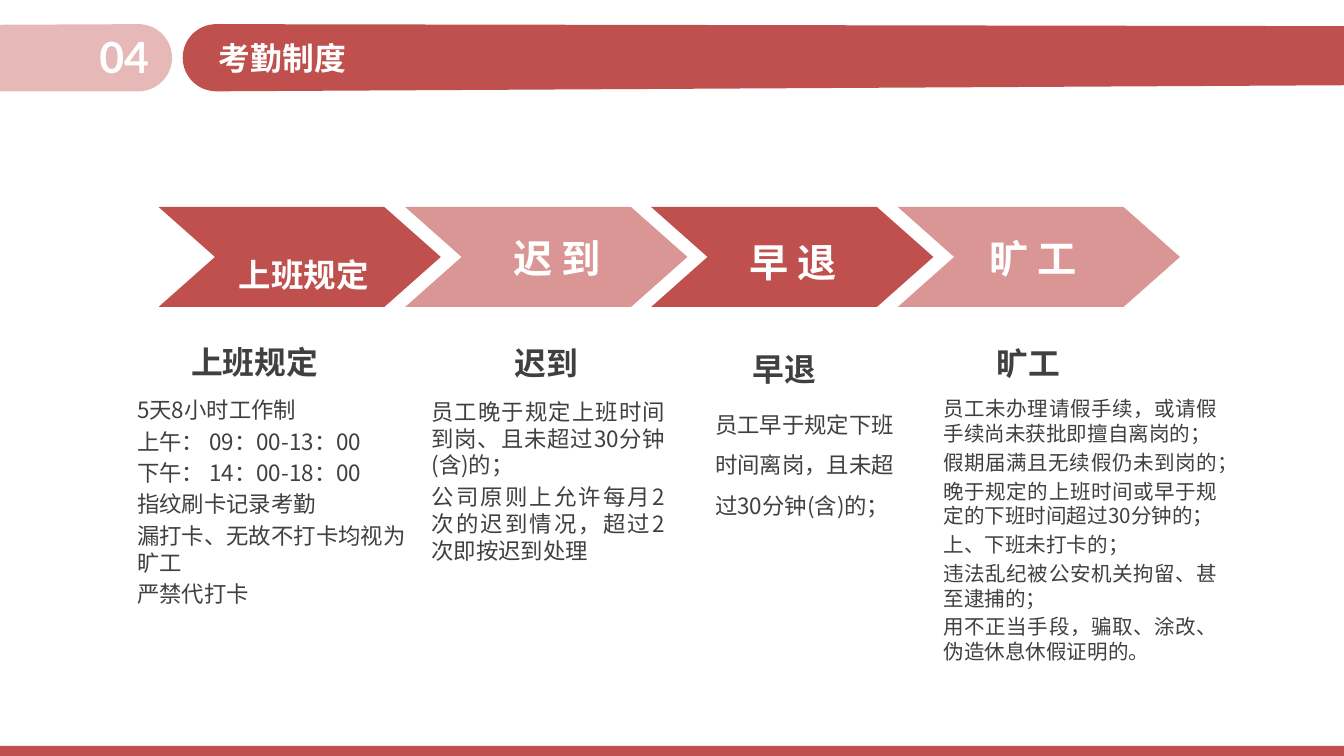
from dataclasses import dataclass
from math import cos, pi, sin

from lxml.etree import SubElement
from pptx import Presentation
from pptx.dml.color import RGBColor as RGB
from pptx.enum.shapes import MSO_SHAPE as SHAPE
from pptx.enum.text import MSO_ANCHOR as ANCHOR, MSO_AUTO_SIZE as AUTO, PP_ALIGN as ALIGN
from pptx.oxml.ns import qn
from pptx.util import Emu, Pt

PX = 4572


@dataclass(frozen=True)
class Theme:
    """Colours, fonts and type sizes of the deck."""
    red: RGB = RGB(0xC0, 0x50, 0x4D)
    rose: RGB = RGB(0xD9, 0x96, 0x94)
    blush: RGB = RGB(0xE6, 0xB9, 0xB8)
    white: RGB = RGB(0xFF, 0xFF, 0xFF)
    ink: RGB = RGB(0x40, 0x40, 0x40)
    latin: str = "Lato"
    cjk: str = "Noto Sans CJK SC"
    number: int = 23
    title: int = 17
    label: int = 21
    lowered: int = 30
    body: int = 12
    small: int = 11


T = Theme()
INSET = dict(margin_left=Emu(14 * PX), margin_right=Emu(14 * PX),
             margin_top=Emu(8 * PX), margin_bottom=Emu(8 * PX))
HEADING = dict(size=T.title, color=T.ink, bold=True, align=ALIGN.CENTER, wrap=False, frame=INSET)
LABEL = dict(color=T.white, bold=True, align=ALIGN.CENTER, frame=dict(vertical_anchor=ANCHOR.MIDDLE))
BODY = dict(color=T.ink, frame=INSET)

STAGES = [
    dict(fill=T.red,
         label=("上班规定", (34, 24, 364, 100), dict(size=T.lowered, spacing=1.2, baseline=-3000)),
         heading=("上班规定", (32, 194, 222, 72)),
         body=(["5天8小时工作制", "上午： 09：00-13：00", "下午： 14：00-18：00",
                "指纹刷卡记录考勤", "漏打卡、无故不打卡均视为旷工", "严禁代打卡"],
               (-46, 274, 446, 338), dict(size=T.body))),
    dict(fill=T.rose,
         label=("迟 到", (49, 30, 354, 90), dict(size=T.label)),
         heading=("迟到", (147, 196, 126, 72)),
         body=(["员工晚于规定上班时间到岗、且未超过30分钟(含)的；",
                "公司原则上允许每月2次的迟到情况，超过2次即按迟到处理"],
               (25, 276, 376, 266), dict(size=T.body, align=ALIGN.JUSTIFY))),
    dict(fill=T.red,
         label=("早 退", (35, 22, 352, 106), dict(size=T.label, spacing=1.2)),
         heading=("早退", (135, 204, 126, 72)),
         body=(["员工早于规定下班时间离岗，且未超过30分钟(含)的；"],
               (81, 276, 310, 196), dict(size=T.body, spacing=1.5))),
    dict(fill=T.rose,
         label=("旷 工", (24, 30, 354, 90), dict(size=T.label)),
         heading=("旷工", (132, 196, 126, 72)),
         body=(["员工未办理请假手续，或请假手续尚未获批即擅自离岗的；", "假期届满且无续假仍未到岗的；",
                "晚于规定的上班时间或早于规定的下班时间超过30分钟的；", "上、下班未打卡的；",
                "违法乱纪被公安机关拘留、甚至逮捕的；", "用不正当手段，骗取、涂改、伪造休息休假证明的。"],
               (54, 274, 436, 422), dict(size=T.small, align=ALIGN.JUSTIFY))),
]


def assign(obj, values):
    """Set every named attribute on the object."""
    for name, value in values.items():
        setattr(obj, name, value)


def paint(sp, color):
    """Give a shape a flat fill with no line or shadow."""
    sp.shadow.inherit = False
    sp.fill.solid()
    sp.fill.fore_color.rgb = color
    sp.line.fill.background()


def polygon(slide, points, color):
    """Draw a closed outline through the points."""
    start, *rest = [(round(x * PX), round(y * PX)) for x, y in points]
    fb = slide.shapes.build_freeform(*start, scale=1.0)
    fb.add_line_segments(rest, close=True)
    paint(fb.convert_to_shape(), color)


def arc(cx, cy, radius, first, steps=32):
    """Return the points of a half circle, clockwise from an angle."""
    angles = [first + pi * i / steps for i in range(steps + 1)]
    return [(cx + radius * cos(a), cy + radius * sin(a)) for a in angles]


def text(slide, box, lines, size, color, bold=False, font=T.cjk, align=ALIGN.LEFT,
         wrap=True, spacing=None, baseline=None, frame=None):
    """Place a text box holding one paragraph for each line."""
    tf = slide.shapes.add_textbox(*(Emu(v * PX) for v in box)).text_frame
    assign(tf, dict(word_wrap=wrap, auto_size=AUTO.SHAPE_TO_FIT_TEXT, **(frame or {})))
    for i, line in enumerate(lines):
        p = tf.paragraphs[0] if i == 0 else tf.add_paragraph()
        assign(p, dict(alignment=align, line_spacing=spacing,
                       space_before=Pt(0.2 * size) if i else Pt(0)))
        r = p.add_run()
        r.text = line
        assign(r.font, dict(name=font, size=Pt(size), bold=bold))
        r.font.color.rgb = color
        rpr = r._r.get_or_add_rPr()
        SubElement(rpr, qn("a:ea")).set("typeface", T.cjk)
        if baseline is not None:
            rpr.set("baseline", str(baseline))


def header(slide, box):
    """Draw the number tab and the title band."""
    x, y, w, h = box
    radius = h / 2
    mid = y + radius
    polygon(slide, [(x, y + 1), *arc(x + 206, mid, radius, -pi / 2), (x, y + h)], T.blush)
    polygon(slide, [*arc(x + 322, mid, radius, pi / 2), (x + w, y + 3), (x + w, y + h - 9)], T.red)
    style = dict(color=T.white, bold=True, font=T.latin, wrap=False)
    text(slide, (x + 128, y, 116, 98), ["04"], T.number, **style)
    text(slide, (x + 306, y + 12, 232, 78), ["考勤制度"], T.title, **style)


def stage(slide, box, data):
    """Draw a chevron with its label, heading and rules."""
    x, y, w, h = box
    tip = 84
    polygon(slide, [(x, y), (x + w - tip, y), (x + w, y + h / 2), (x + w - tip, y + h),
                    (x, y + h), (x + tip, y + h / 2)], data["fill"])

    def inside(part):
        """Move a part's box to the stage's corner."""
        dx, dy, pw, ph = part
        return x + dx, y + dy, pw, ph

    label, place, style = data["label"]
    text(slide, inside(place), [label], **LABEL, **style)
    heading, place = data["heading"]
    text(slide, inside(place), [heading], **HEADING)
    lines, place, style = data["body"]
    text(slide, inside(place), lines, **BODY, **style)


def footer(slide, box):
    """Draw the band along the bottom edge."""
    paint(slide.shapes.add_shape(SHAPE.RECTANGLE, *(Emu(v * PX) for v in box)), T.red)


def main():
    """Build the attendance slide and save it."""
    prs = Presentation()
    assign(prs, dict(slide_width=Emu(2000 * PX), slide_height=Emu(1125 * PX)))
    slide = prs.slides.add_slide(prs.slide_layouts[6])
    footer(slide, (0, 1110, 2000, 15))
    header(slide, (0, 36, 2000, 100))
    for i, data in enumerate(STAGES):
        stage(slide, (236 + round(i * 1100 / 3), 308, 420, 149), data)
    prs.save("out.pptx")


if __name__ == "__main__":
    main()
